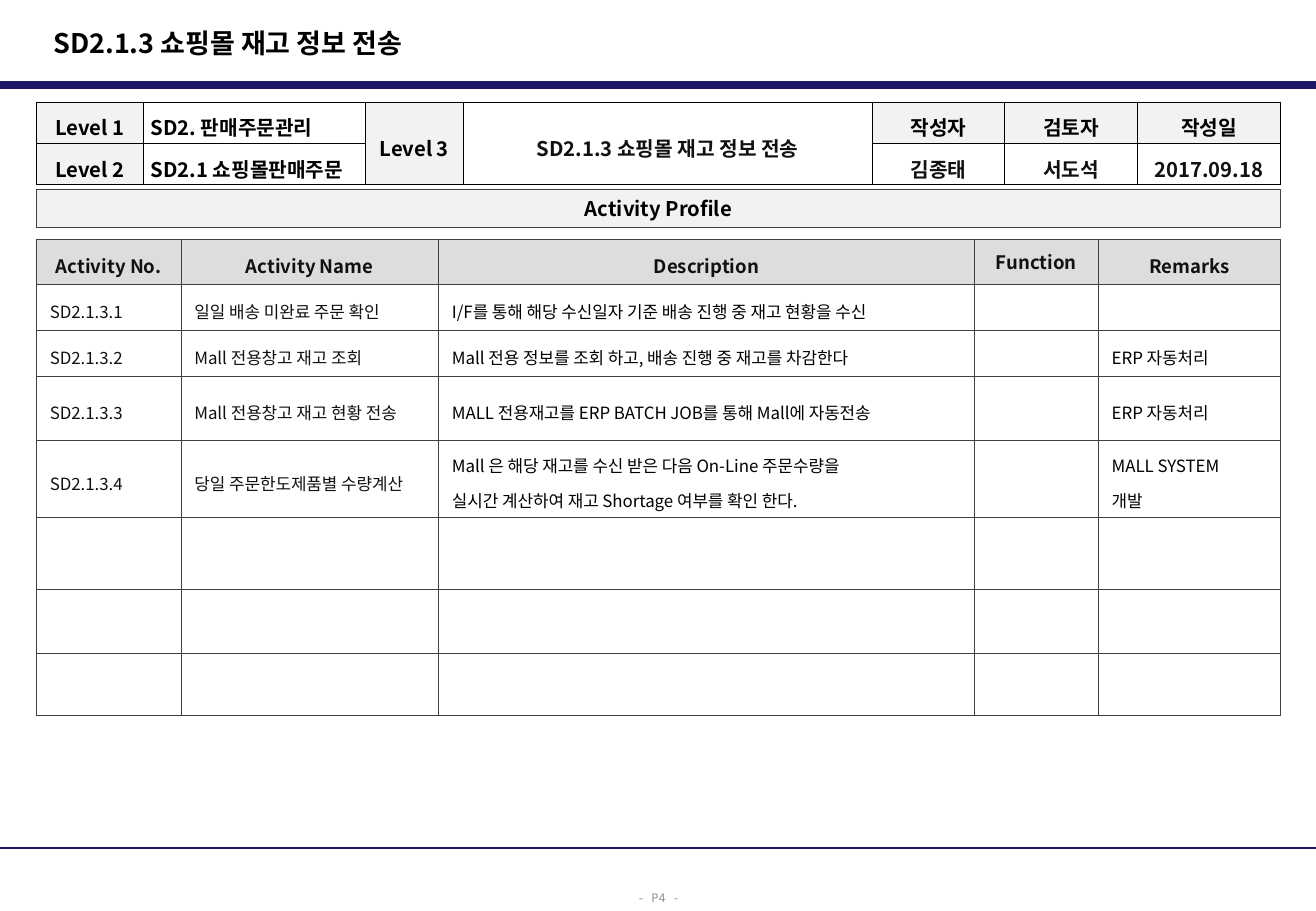
import pptx
import pptx.util
import pptx.dml.color
import pptx.enum.shapes
import pptx.enum.text
import pptx.oxml.ns
from lxml import etree

# Content
TITLE = "SD2.1.3 쇼핑몰 재고 정보 전송"
BAND = "Activity Profile"
PAGE = "- P4 -"
HEADER = [
    ["Level 1", "SD2. 판매주문관리", "Level 3", TITLE, "작성자", "검토자", "작성일"],
    ["Level 2", "SD2.1 쇼핑몰판매주문", "", "", "김종태", "서도석", "2017.09.18"],
]
ACTIVITIES = [
    ["Activity No.", "Activity Name", "Description", "Function", "Remarks"],
    ["SD2.1.3.1", "일일 배송 미완료 주문 확인",
     "I/F를 통해 해당 수신일자 기준 배송 진행 중 재고 현황을 수신", "", ""],
    ["SD2.1.3.2", "Mall 전용창고 재고 조회",
     "Mall 전용 정보를 조회 하고, 배송 진행 중 재고를 차감한다", "", "ERP 자동처리"],
    ["SD2.1.3.3", "Mall 전용창고 재고 현황 전송",
     "MALL 전용재고를 ERP BATCH JOB를 통해 Mall에 자동전송", "", "ERP 자동처리"],
    ["SD2.1.3.4", "당일 주문한도제품별 수량계산",
     "Mall 은 해당 재고를 수신 받은 다음 On-Line 주문수량을\n"
     "실시간 계산하여 재고 Shortage 여부를 확인 한다.", "", "MALL SYSTEM\n개발"],
] + [[""] * 5] * 3

# Grid in inches
W, H = 10.83, 7.5
LEFT, WIDTH = 0.3, 10.24
HEADER_COLS = [0.88, 1.83, 0.8, 3.37, 1.09, 1.09, 1.18]
HEADER_ROWS = [0.34, 0.34]
ACTIVITY_COLS = [1.19, 2.12, 4.41, 1.02, 1.5]
ACTIVITY_ROWS = [0.37, 0.36, 0.36, 0.53, 0.63, 0.59, 0.53, 0.51]

COLORS = {"navy": "191966", "black": "000000", "ink": "111111", "grid": "404040",
          "label": "F2F2F2", "head": "DDDDDD", "page": "969696"}
SANS, MONO = "Noto Sans CJK KR", "DejaVu Sans Mono"
ALIGN = pptx.enum.text.PP_ALIGN
MIDDLE = pptx.enum.text.MSO_ANCHOR.MIDDLE
GROW = pptx.enum.text.MSO_AUTO_SIZE.SHAPE_TO_FIT_TEXT
inch, Pt = pptx.util.Inches, pptx.util.Pt


def rgb(name):
    return pptx.dml.color.RGBColor.from_string(COLORS[name])


def write(tf, text, size=12, color="black", bold=True, font=SANS,
          align=ALIGN.CENTER, spacing=None):
    for i, line in enumerate(text.split("\n")):
        p = tf.paragraphs[0] if i == 0 else tf.add_paragraph()
        p.alignment = align
        if spacing:
            p.line_spacing = spacing
        p.space_before = Pt(0.2 * size if i else 0)
        r = p.add_run()
        r.text = line
        r.font.size, r.font.bold, r.font.name = Pt(size), bold, font
        r.font.color.rgb = rgb(color)
        ea = etree.SubElement(r.font._element, pptx.oxml.ns.qn("a:ea"))
        ea.set("typeface", font)


def add_rule(s, y, weight):
    line = s.shapes.add_connector(pptx.enum.shapes.MSO_CONNECTOR.STRAIGHT,
                                  0, inch(y), inch(W), inch(y))
    line.line.color.rgb = rgb("navy")
    line.line.width = Pt(weight)
    etree.SubElement(line._element.spPr, pptx.oxml.ns.qn("a:effectLst"))


def add_borders(cell, color):
    tc_pr = cell._tc.get_or_add_tcPr()
    for side in ("lnL", "lnR", "lnT", "lnB"):
        ln = etree.SubElement(tc_pr, pptx.oxml.ns.qn("a:" + side), w=str(Pt(0.5)))
        fill = etree.SubElement(ln, pptx.oxml.ns.qn("a:solidFill"))
        etree.SubElement(fill, pptx.oxml.ns.qn("a:srgbClr"), val=COLORS[color])


def add_grid(s, top, cols, rows, data, border, margins, style):
    """style(row, column) gives the fill name or None, and the text format."""
    table = s.shapes.add_table(len(rows), len(cols), inch(LEFT), inch(top),
                               inch(sum(cols)), inch(sum(rows))).table
    table.first_row = table.horz_banding = False
    for column, width in zip(table.columns, cols):
        column.width = inch(width)
    for i, height in enumerate(rows):
        table.rows[i].height = inch(height)
        for j, text in enumerate(data[i]):
            cell = table.cell(i, j)
            fill, fmt = style(i, j)
            add_borders(cell, border)
            if fill:
                cell.fill.solid()
                cell.fill.fore_color.rgb = rgb(fill)
            else:
                cell.fill.background()
            cell.vertical_anchor = MIDDLE
            cell.margin_left = cell.margin_right = inch(margins[0])
            cell.margin_top = cell.margin_bottom = inch(margins[1])
            if text:
                write(cell.text_frame, text, **fmt)
    return table


def header_style(i, j):
    label = j in (0, 2) or (i == 0 and j > 3)
    return ("label" if label else None,
            {"color": "ink" if j == 3 or (i == 1 and j > 3) else "black",
             "align": ALIGN.LEFT if j == 1 else ALIGN.CENTER, "spacing": 1.3})


def activity_style(i, j):
    if i == 0:
        return "head", {"size": 11, "color": "ink", "spacing": None if j == 3 else 1.3}
    return None, {"size": 10, "bold": False, "color": "ink" if j < 2 else "black",
                  "align": ALIGN.LEFT, "spacing": 1.3}


def main():
    prs = pptx.Presentation()
    prs.slide_width, prs.slide_height = inch(W), inch(H)
    s = prs.slides.add_slide(prs.slide_layouts[5])

    # Frame: rules and page number
    add_rule(s, 0.7, 4.5)
    add_rule(s, 6.98, 1.5)
    tf = s.shapes.add_textbox(inch(5.14), inch(7.25), inch(0.56), inch(0.25)).text_frame
    tf.word_wrap, tf.auto_size = False, GROW
    write(tf, PAGE, size=7, color="page", bold=False, font=MONO, spacing=1.3)

    # Title
    title = s.shapes.title
    title.left, title.top, title.width, title.height = map(inch, (0.34, 0.16, 7.11, 0.38))
    title.text_frame.vertical_anchor = MIDDLE
    title.text_frame.auto_size = GROW
    write(title.text_frame, TITLE, size=16, align=ALIGN.LEFT)

    # Activity table
    add_grid(s, 1.97, ACTIVITY_COLS, ACTIVITY_ROWS, ACTIVITIES, "grid",
             (0.11, 0.04), activity_style)

    # Section band
    band = s.shapes.add_shape(pptx.enum.shapes.MSO_SHAPE.RECTANGLE,
                              inch(LEFT), inch(1.56), inch(WIDTH), inch(0.31))
    band.shadow.inherit = False
    band.fill.solid()
    band.fill.fore_color.rgb = rgb("label")
    band.line.color.rgb = rgb("grid")
    band.line.width = Pt(0.5)
    band.text_frame.word_wrap = False
    band.text_frame.vertical_anchor = MIDDLE
    write(band.text_frame, BAND)

    # Document header table
    table = add_grid(s, 0.84, HEADER_COLS, HEADER_ROWS, HEADER, "black",
                     (0.06, 0.01), header_style)
    for j in (2, 3):
        table.cell(0, j).merge(table.cell(1, j))

    prs.save("out.pptx")


if __name__ == "__main__":
    main()
